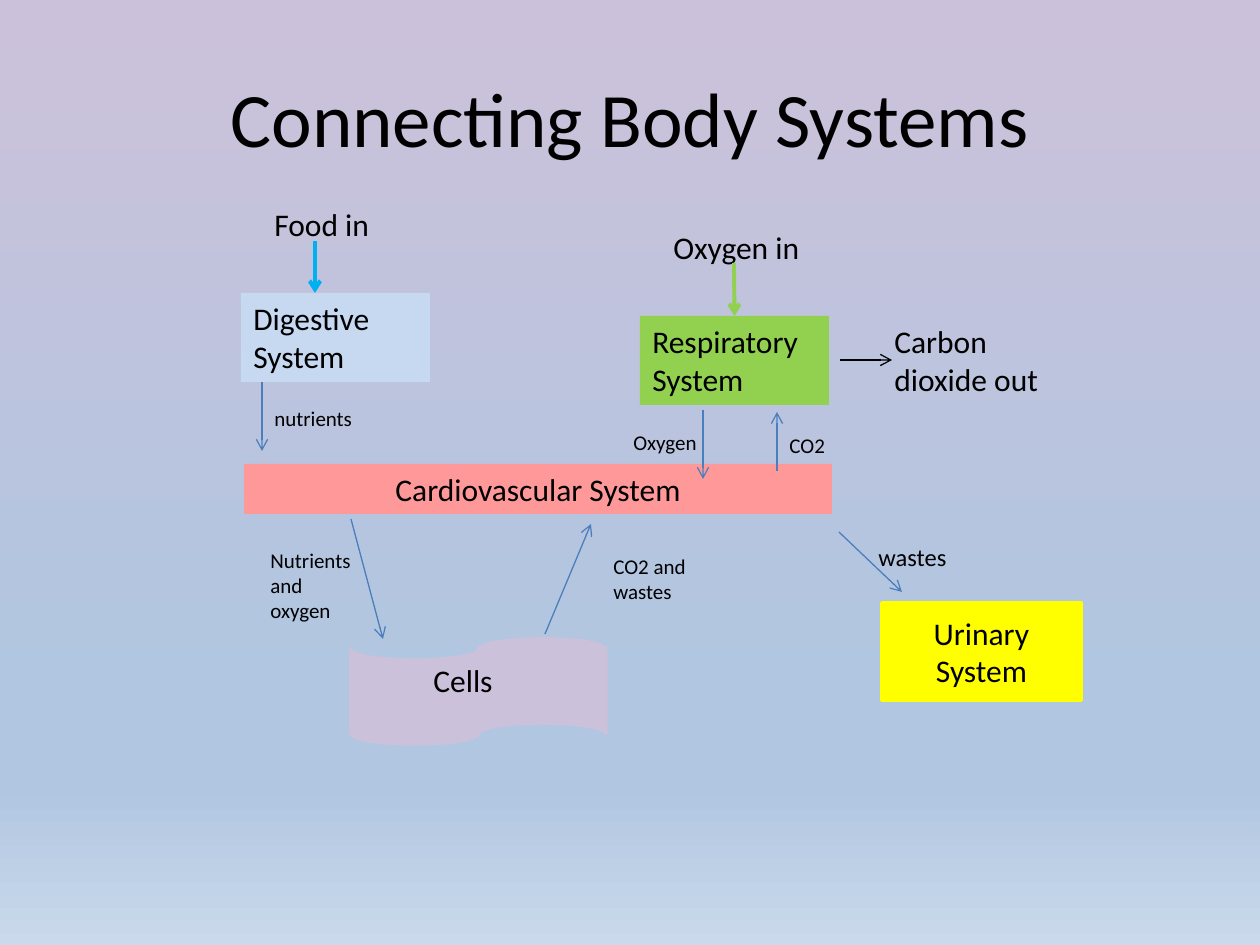
from copy import deepcopy

from lxml import etree
from pptx import Presentation
from pptx.dml.color import RGBColor
from pptx.enum.shapes import MSO_CONNECTOR, MSO_SHAPE
from pptx.enum.text import MSO_ANCHOR, MSO_AUTO_SIZE, PP_ALIGN
from pptx.oxml.ns import qn
from pptx.util import Emu, Pt

RECTANGLE, TAPE = MSO_SHAPE.RECTANGLE, MSO_SHAPE.FLOWCHART_PUNCHED_TAPE
STRAIGHT = MSO_CONNECTOR.STRAIGHT
LEFT, CENTER = PP_ALIGN.LEFT, PP_ALIGN.CENTER
TOP, MIDDLE = MSO_ANCHOR.TOP, MSO_ANCHOR.MIDDLE
TOP_SIDE = 0
PX = 914400 // 126

THEME = {
    "font": "Calibri", "title": 44, "system": 18, "waste": 14, "label": 12,
    "text": "000000", "lilac": "CCC1DA", "digestive": "C6D9F1",
    "respiratory": "92D050", "blood": "FF9999", "urinary": "FFFF00",
    "food": "00B0F0", "flow": "4B7EBC",
    "background": [(0, "CCC1DA"), (0.74, "B0C6E1"), (0.83, "B0C6E1"), (1, "CAD9EB")],
}

TITLE = ("Connecting Body Systems", (63, 38, 1134, 157))

# text, preset, box in px, fill, alignment, anchor, outline width in points
SYSTEMS = [
    ("", TAPE, (351, 639, 255, 105), "lilac", CENTER, MIDDLE, 2),
    ("Digestive System", RECTANGLE, (241, 293, 189, 89), "digestive", LEFT, TOP, 0),
    ("Respiratory System", RECTANGLE, (640, 316, 189, 89), "respiratory", LEFT, TOP, 0),
    ("Cardiovascular System", RECTANGLE, (244, 464, 588, 50), "blood", CENTER, TOP, 0),
    ("Urinary System", RECTANGLE, (882, 603, 199, 97), "urinary", CENTER, MIDDLE, 2),
]

# text, box in px, type size
LABELS = [
    ("Food in", (262, 199, 136, 53), "system"),
    ("Oxygen in", (661, 222, 168, 50), "system"),
    ("Carbon dioxide out", (882, 316, 210, 89), "system"),
    ("Cells", (421, 655, 147, 53), "system"),
    ("nutrients", (262, 399, 105, 38), "label"),
    ("Oxygen", (621, 423, 105, 38), "label"),
    ("CO2", (777, 426, 105, 38), "label"),
    ("Nutrients and oxygen", (258, 541, 120, 89), "label"),
    ("CO2 and wastes", (601, 547, 120, 63), "label"),
    ("wastes", (866, 536, 163, 43), "waste"),
]

# start, end, colour, width in points, system joined at its top
ARROWS = [
    ((315, 241), (315, 293), "food", 2.25, None),
    ((734, 263), (734, 316), "respiratory", 2.25, "Respiratory System"),
    ((840, 360), (892, 360), "text", 0.75, None),
    ((262, 382), (262, 451), "flow", 0.75, None),
    ((777, 471), (777, 412), "flow", 0.75, None),
    ((703, 410), (703, 479), "flow", 0.75, None),
    ((351, 519), (383, 639), "flow", 0.75, None),
    ((545, 634), (591, 524), "flow", 0.75, None),
    ((839, 532), (902, 592), "flow", 0.75, None),
]


def color(name):
    return RGBColor.from_string(THEME[name])


def emu(values):
    return [Emu(value * PX) for value in values]


def write(shape, text, size, alignment=LEFT, anchor=TOP):
    frame = shape.text_frame
    frame.word_wrap = True
    frame.auto_size = MSO_AUTO_SIZE.NONE
    frame.vertical_anchor = anchor
    paragraph = frame.paragraphs[0]
    paragraph.alignment = alignment
    run = paragraph.add_run()
    run.text = text
    run.font.name = THEME["font"]
    run.font.size = Pt(THEME[size])
    run.font.color.rgb = color("text")


def paint_background(slide):
    fill = slide.background.fill
    fill.gradient()
    fill.gradient_angle = 270  # counter-clockwise, so the colours run downwards
    stop_list = slide.background._cSld.find(".//" + qn("a:gsLst"))
    while len(stop_list) < len(THEME["background"]):
        stop_list.append(deepcopy(stop_list[0]))
    for stop, (position, value) in zip(fill.gradient_stops, THEME["background"]):
        stop.position = position
        stop.color.rgb = RGBColor.from_string(value)


def add_system(slide, text, preset, box, fill, alignment, anchor, outline):
    shape = slide.shapes.add_shape(preset, *emu(box))
    shape.shadow.inherit = False
    shape.fill.solid()
    shape.fill.fore_color.rgb = color(fill)
    if outline:
        shape.line.color.rgb = color(fill)
        shape.line.width = Pt(outline)
    else:
        shape.line.fill.background()
    if text:
        write(shape, text, "system", alignment, anchor)
    return shape


def add_arrow(slide, start, end, tint, width, target=None):
    arrow = slide.shapes.add_connector(STRAIGHT, *emu(start + end))
    if target is not None:
        arrow.end_connect(target, TOP_SIDE)
    arrow.line.color.rgb = color(tint)
    arrow.line.width = Pt(width)
    etree.SubElement(arrow.line._get_or_add_ln(), qn("a:tailEnd"), type="arrow")
    etree.SubElement(arrow._element.spPr, qn("a:effectLst"))


def main():
    presentation = Presentation()
    presentation.slide_width, presentation.slide_height = emu((1260, 945))
    slide = presentation.slides.add_slide(presentation.slide_layouts[5])
    paint_background(slide)

    # Title
    text, box = TITLE
    title = slide.shapes.title
    title.left, title.top, title.width, title.height = emu(box)
    write(title, text, "title", CENTER, MIDDLE)

    # Body systems, then the labels and arrows between them
    systems = {system[0]: add_system(slide, *system) for system in SYSTEMS}
    for text, box, size in LABELS:
        write(slide.shapes.add_textbox(*emu(box)), text, size)
    for start, end, tint, width, target in ARROWS:
        add_arrow(slide, start, end, tint, width, systems.get(target))

    presentation.save("out.pptx")


if __name__ == "__main__":
    main()
